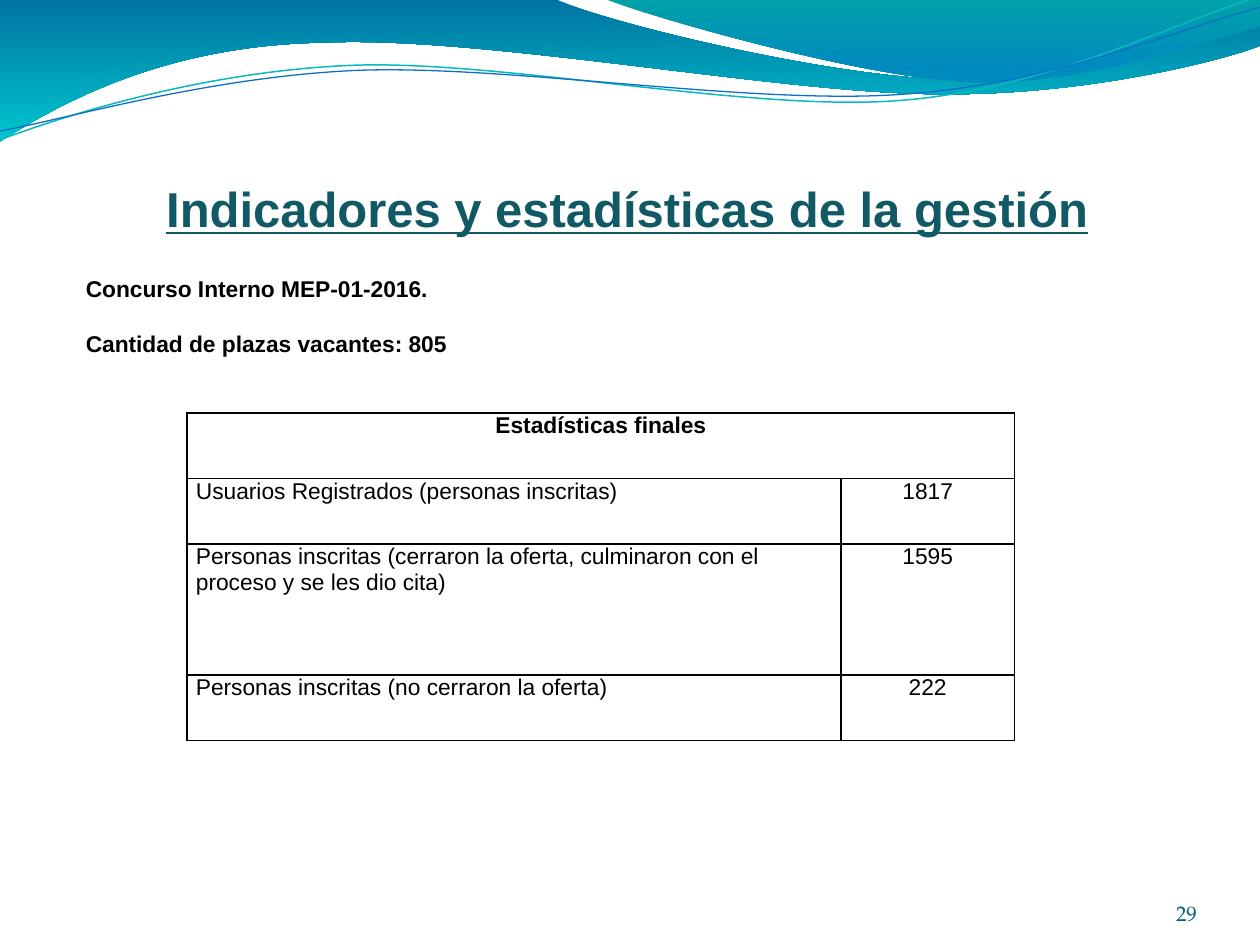
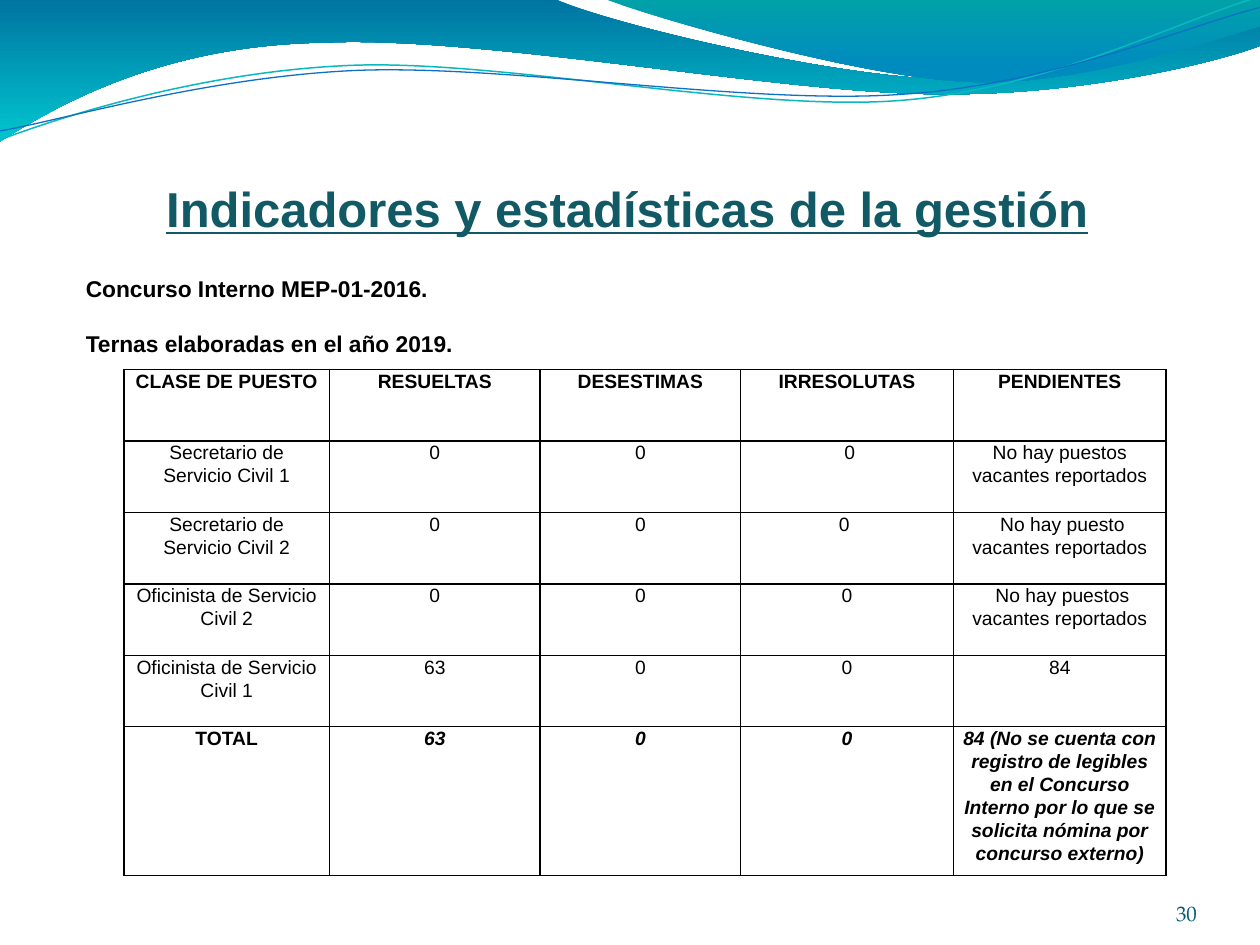
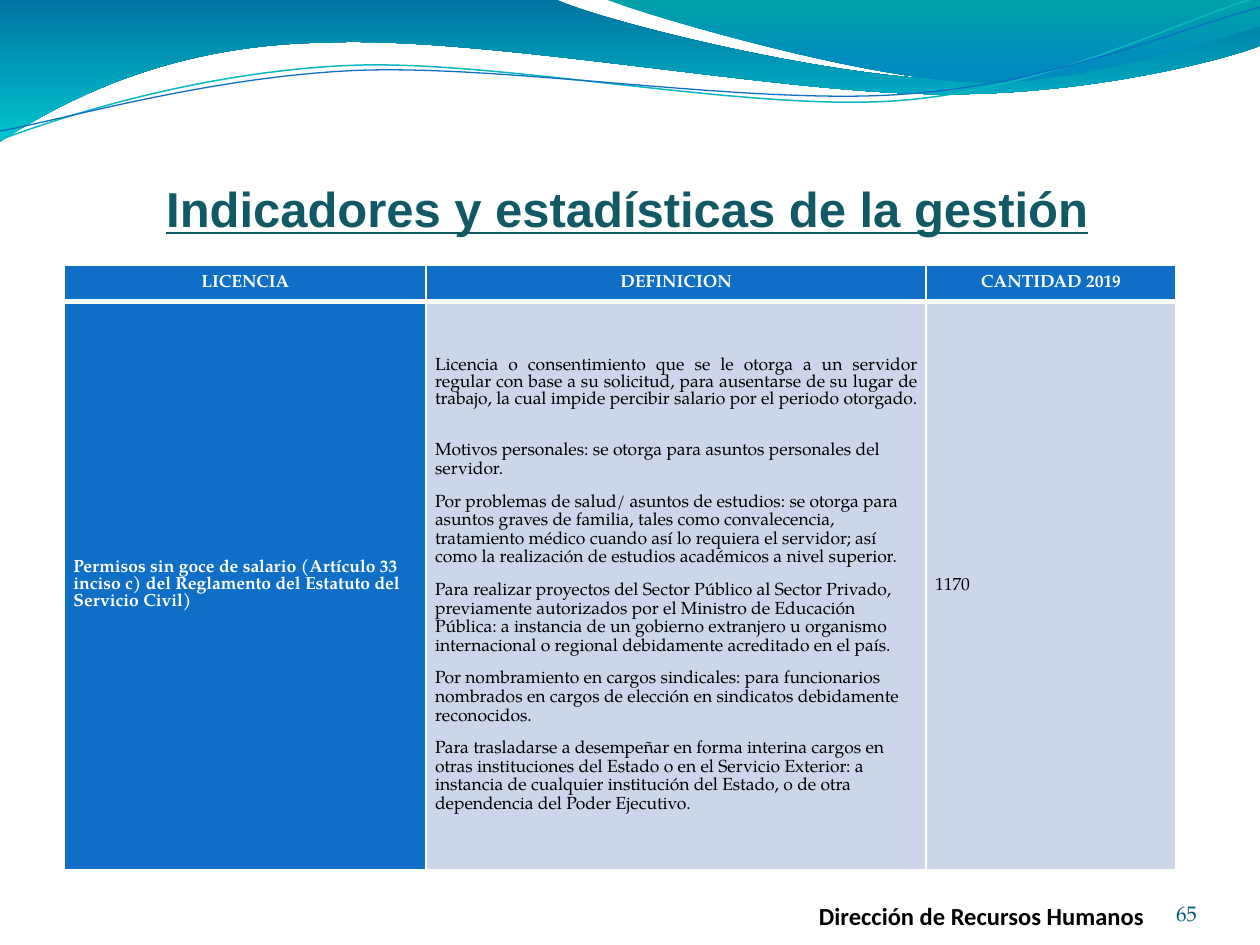
from lxml import etree
from pptx import Presentation, util as u
from pptx.dml.color import RGBColor
from pptx.enum import text
from pptx.oxml import ns

COLORS = {
    "title": "115964", "number": "045D75", "ink": "000000", "white": "FFFFFF",
    "blue": "0F6FC6", "pale": "CCD5EA", "teal_line": "0AB8BF",
    "deep": "0074A1", "aqua": "00C6CF", "green": "00A1A9", "sky": "008BBF",
}
SERIF = "TeX Gyre Pagella"
LEFT, CENTER, RIGHT, JUSTIFY = (
    text.PP_ALIGN.LEFT, text.PP_ALIGN.CENTER, text.PP_ALIGN.RIGHT, text.PP_ALIGN.JUSTIFY)
TOP, MIDDLE, BOTTOM = (
    text.MSO_ANCHOR.TOP, text.MSO_ANCHOR.MIDDLE, text.MSO_ANCHOR.BOTTOM)

# Font formats
TITLE = dict(name="Arial", size=28, color="title", bold=True, underline=True)
INTRO = dict(name="Arial", size=13, color="ink", bold=True)
BODY = INTRO | dict(bold=False)
HEAD_SMALL = INTRO | dict(size=11)
BODY_SMALL = BODY | dict(size=11)
TOTAL = HEAD_SMALL | dict(italic=True)
LICENCE_HEAD = dict(name=SERIF, size=10, color="white", bold=True)
LICENCE_BODY = LICENCE_HEAD | dict(color="ink", bold=False)
NUMBER = dict(name=SERIF, size=12, color="number", bold=False)
FOOTER = dict(name="Calibri", size=14, color="ink", bold=True)

# Paragraph formats
TIGHT = dict(line_spacing=1.07)
SPACED = dict(line_spacing=1.07, space_after=u.Pt(8))

# Boxes in cm: left, top, width, height
TITLE_BOX = (3.1, 3.47, 19.2, 1.45)
INTRO_BOX = (1.48, 5.41, 20.4, 1.93)
NUMBER_BOX = (22.02, 17.65, 2.11, 1.02)
FOOTER_BOX = (16.51, 17.73, 7.59, 1.02)

# Waves in cm: a pair is a straight step, six numbers are a curve
BANDS = [
    ([(0, 0), (11.18, -0.03), (12.09, 0.43, 16.87, 1.6, 19.25, 1.6),
      (21.67, 1.6, 24.33, 0.66, 25.4, 0.23), (25.43, 0.91),
      (24.97, 1.12, 22.1, 1.93, 18.95, 1.9), (15.8, 1.9, 9.7, 0.71, 6.53, 0.86),
      (3.28, 0.91, 1.17, 2.11, -0.03, 2.87)],
     [(0, "deep", 45), (1, "aqua", 55)]),
    ([(12.17, -0.03), (12.93, 0.28, 17.32, 1.57, 19.53, 1.65),
      (21.74, 1.75, 24.41, 0.81, 25.4, 0.53), (25.4, 0)],
     [(0, "green", 30), (0.8, "sky", 45)]),
]
STRANDS = [
    ([(0, 2.82), (1.22, 2.36, 4.01, 1.45, 7.04, 1.32),
      (10.03, 1.19, 15.06, 2.26, 18.11, 2.03), (21.16, 1.8, 23.83, 0.38, 25.35, -0.05)],
     "teal_line", 0.85),
    ([(0, 2.64), (1.19, 2.44, 4.17, 1.55, 7.19, 1.42),
      (10.24, 1.3, 15.16, 2.13, 18.21, 1.9), (21.23, 1.7, 23.9, 0.53, 25.4, 0.15)],
     "blue", 0.75),
]


def rgb(name):
    return RGBColor.from_string(COLORS[name])


def lengths(values):
    return [u.Cm(value) for value in values]


def set_all(target, values):
    for name, value in values.items():
        setattr(target, name, value)


def write(frame, lines, style, align=LEFT, anchor=TOP, margins=(0.25, 0.13, 0.25, 0.13),
          spacing=None):
    """Fill a frame; a line is a string or (string, paragraph format)."""
    names = ("margin_left", "margin_top", "margin_right", "margin_bottom")
    set_all(frame, dict(zip(names, lengths(margins))))
    set_all(frame, dict(word_wrap=True, vertical_anchor=anchor))
    for index, line in enumerate(lines):
        words, extra = (line, {}) if isinstance(line, str) else line
        para = frame.paragraphs[0] if index == 0 else frame.add_paragraph()
        set_all(para, dict(alignment=align) | (spacing or {}) | extra)
        span = para.add_run()
        span.text = words
        set_all(span.font, {k: v for k, v in style.items() if k not in ("size", "color")})
        span.font.size = u.Pt(style["size"])
        span.font.color.rgb = rgb(style["color"])


def add_text(page, box, lines, style, **layout):
    frame = page.shapes.add_textbox(*lengths(box)).text_frame
    write(frame, lines, style, **layout)


# Top waves, shared through the slide master

def add_outline(page, steps, close):
    """Draw the steps, then join each curve's three points into one Bézier."""
    points = [lengths(step[i:i + 2]) for step in steps for i in range(0, len(step), 2)]
    builder = page.shapes.build_freeform(*points[0], scale=1.0)
    builder.add_line_segments(points[1:], close=close)
    outline = builder.convert_to_shape()
    outline.shadow.inherit = False
    segments = iter(list(outline._element.iter(ns.qn("a:lnTo"))))
    for step in steps[1:]:
        parts = [next(segments) for _ in range(len(step) // 2)]
        if len(parts) == 3:
            curve = etree.Element(ns.qn("a:cubicBezTo"))
            parts[0].addprevious(curve)
            for part in parts:
                curve.append(part[0])
                part.getparent().remove(part)
    return outline


def add_band(page, steps, stops):
    band = add_outline(page, steps, True)
    band.line.fill.background()
    band.fill.gradient()
    band.fill.gradient_angle = 270
    values = band._element.spPr.iter(ns.qn("a:srgbClr"))
    for stop, (position, color, _) in zip(band.fill.gradient_stops, stops):
        stop.position = position
        stop.color.rgb = rgb(color)
    for value, (_, _, opacity) in zip(values, stops):
        etree.SubElement(value, ns.qn("a:alpha"), val=str(opacity * 1000))
    return band


def add_strand(page, steps, color, width):
    strand = add_outline(page, steps, False)
    strand.fill.background()
    strand.line.color.rgb = rgb(color)
    strand.line.width = u.Pt(width)
    return strand


def add_waves(page):
    waves = [add_band(page, *band) for band in BANDS]
    waves += [add_strand(page, *strand) for strand in STRANDS]
    tree = page.slide_layout.slide_master.shapes._spTree
    for index, wave in enumerate(waves):
        element = wave._element
        element.nvSpPr.cNvPr.set("id", str(100 + index))
        tree.insert(2 + index, element)


# Tables

def set_borders(cell, color, top=1, bottom=1):
    properties = cell._tc.get_or_add_tcPr()
    for index, (side, width) in enumerate(zip("LRTB", (1, 1, top, bottom))):
        line = etree.Element(ns.qn(f"a:ln{side}"), w=str(u.Pt(width)))
        fill = etree.SubElement(line, ns.qn("a:solidFill"))
        etree.SubElement(fill, ns.qn("a:srgbClr"), val=COLORS[color])
        properties.insert(index, line)


def add_grid(page, corner, columns, rows):
    box = (*corner, sum(columns), sum(rows))
    grid = page.shapes.add_table(len(rows), len(columns), *lengths(box)).table
    set_all(grid, dict(first_row=False, horz_banding=False))
    for column, width in zip(grid.columns, columns):
        column.width = u.Cm(width)
    for row, height in zip(grid.rows, rows):
        row.height = u.Cm(height)
    return grid


def fill_cell(cell, lines, style, fill=None, align=CENTER, anchor=TOP, spacing=None):
    write(cell.text_frame, lines, style, align, spacing=spacing)
    set_all(cell, dict(margin_left=u.Cm(0.18), margin_right=u.Cm(0.18),
                       margin_top=0, margin_bottom=0, vertical_anchor=anchor))
    if fill:
        cell.fill.solid()
        cell.fill.fore_color.rgb = rgb(fill)
    else:
        cell.fill.background()


def add_final_statistics(page, corner):
    entries = [
        ("Usuarios Registrados (personas inscritas)", "1817"),
        ("Personas inscritas (cerraron la oferta, culminaron con el proceso y se les dio cita)",
         "1595"),
        ("Personas inscritas (no cerraron la oferta)", "222"),
    ]
    grid = add_grid(page, corner, (13.18, 3.5), (1.32, 1.32, 2.64, 1.32))
    grid.cell(0, 0).merge(grid.cell(0, 1))
    fill_cell(grid.cell(0, 0), ["Estadísticas finales"], INTRO)
    for row, entry in enumerate(entries, 1):
        for column, words in enumerate(entry):
            fill_cell(grid.cell(row, column), [words], BODY, align=(LEFT, CENTER)[column])
    for cell in grid.iter_cells():
        set_borders(cell, "ink")


def add_shortlists(page, corner):
    entries = [
        ("CLASE DE PUESTO", "RESUELTAS", "DESESTIMAS", "IRRESOLUTAS", "PENDIENTES"),
        ("Secretario de Servicio Civil 1", "0", "0", " 0", "No hay puestos vacantes reportados"),
        ("Secretario de Servicio Civil 2", "0", "0", "0 ", " No hay puesto vacantes reportados"),
        ("Oficinista de Servicio Civil 2", "0", "0", "0", " No hay puestos vacantes reportados"),
        ("Oficinista de Servicio Civil 1", "63", "0", "0", "84"),
        ("TOTAL", "63", "0", "0",
         "84 (No se cuenta con registro de legibles en el Concurso Interno "
         "por lo que se solicita nómina por concurso externo)"),
    ]
    last = len(entries) - 1
    grid = add_grid(page, corner, (4.14, 4.25, 4.04, 4.29, 4.29), [1.44] * last + [3])
    for row, entry in enumerate(entries):
        for column, words in enumerate(entry):
            if row == last and column > 0:
                style = TOTAL
            else:
                style = HEAD_SMALL if row in (0, last) else BODY_SMALL
            cell = grid.cell(row, column)
            fill_cell(cell, [words], style, spacing=TIGHT)
            set_borders(cell, "ink")


def add_licences(page, corner):
    definition = [
        ("Licencia o consentimiento que se le otorga a un servidor regular con base a su "
         "solicitud, para ausentarse de su lugar de trabajo, la cual impide percibir salario "
         "por el periodo otorgado.",
         dict(alignment=JUSTIFY, line_spacing=1.0, space_after=u.Pt(18.5))),
        "Motivos personales: se otorga para asuntos personales del servidor.",
        "Por problemas de salud/ asuntos de estudios: se otorga para asuntos graves de "
        "familia, tales como convalecencia, tratamiento médico cuando así lo requiera el "
        "servidor; así como la realización de estudios académicos a nivel superior.",
        "Para realizar proyectos del Sector Público al Sector Privado, previamente "
        "autorizados por el Ministro de Educación Pública: a instancia de un gobierno "
        "extranjero u organismo internacional o regional debidamente acreditado en el país.",
        "Por nombramiento en cargos sindicales: para funcionarios nombrados en cargos de "
        "elección en sindicatos debidamente reconocidos.",
        "Para trasladarse a desempeñar en forma interina cargos en otras instituciones del "
        "Estado o en el Servicio Exterior: a instancia de cualquier institución del Estado, "
        "o de otra dependencia del Poder Ejecutivo.",
    ]
    permit = ("Permisos sin goce de salario (Artículo 33 inciso c) del Reglamento "
              "del Estatuto del Servicio Civil)")
    grid = add_grid(page, corner, (7.29, 10.08, 5.03), (0.74, 11.46))
    for column, words in enumerate(("LICENCIA", "DEFINICION", "CANTIDAD 2019")):
        fill_cell(grid.cell(0, column), [words], LICENCE_HEAD, "blue", anchor=MIDDLE)
        set_borders(grid.cell(0, column), "white", bottom=3)
    fill_cell(grid.cell(1, 0), [permit], LICENCE_HEAD, "blue", LEFT, MIDDLE)
    for column, lines in enumerate((definition, ["1170"]), 1):
        fill_cell(grid.cell(1, column), lines, LICENCE_BODY, "pale", LEFT, MIDDLE, SPACED)
    for column in range(3):
        set_borders(grid.cell(1, column), "white", top=3)


# Slides

def add_page(deck, number):
    page = deck.slides.add_slide(deck.slide_layouts[5])
    title = page.shapes.title
    set_all(title, dict(zip(("left", "top", "width", "height"), lengths(TITLE_BOX))))
    write(title.text_frame, ["Indicadores y estadísticas de la gestión"], TITLE)
    title.text_frame.auto_size = text.MSO_AUTO_SIZE.NONE
    add_text(page, NUMBER_BOX, [str(number)], NUMBER,
             align=RIGHT, anchor=BOTTOM, margins=(0, 0, 0, 0))
    return page


def add_intro(page, subject):
    lines = ["Concurso Interno MEP-01-2016.", (subject, dict(space_before=u.Pt(16)))]
    add_text(page, INTRO_BOX, lines, INTRO)


def main():
    deck = Presentation()
    deck.slide_width, deck.slide_height = u.Cm(25.4), u.Cm(19.05)

    page = add_page(deck, 29)
    add_waves(page)
    add_intro(page, "Cantidad de plazas vacantes: 805")
    add_final_statistics(page, (3.77, 8.33))

    page = add_page(deck, 30)
    add_intro(page, "Ternas elaboradas en el año 2019.")
    add_shortlists(page, (2.5, 7.45))

    page = add_page(deck, 65)
    add_licences(page, (1.3, 5.34))
    add_text(page, FOOTER_BOX, ["Dirección de Recursos Humanos"], FOOTER,
             anchor=BOTTOM, margins=(0, 0.13, 0, 0))

    deck.save("out.pptx")


if __name__ == "__main__":
    main()
